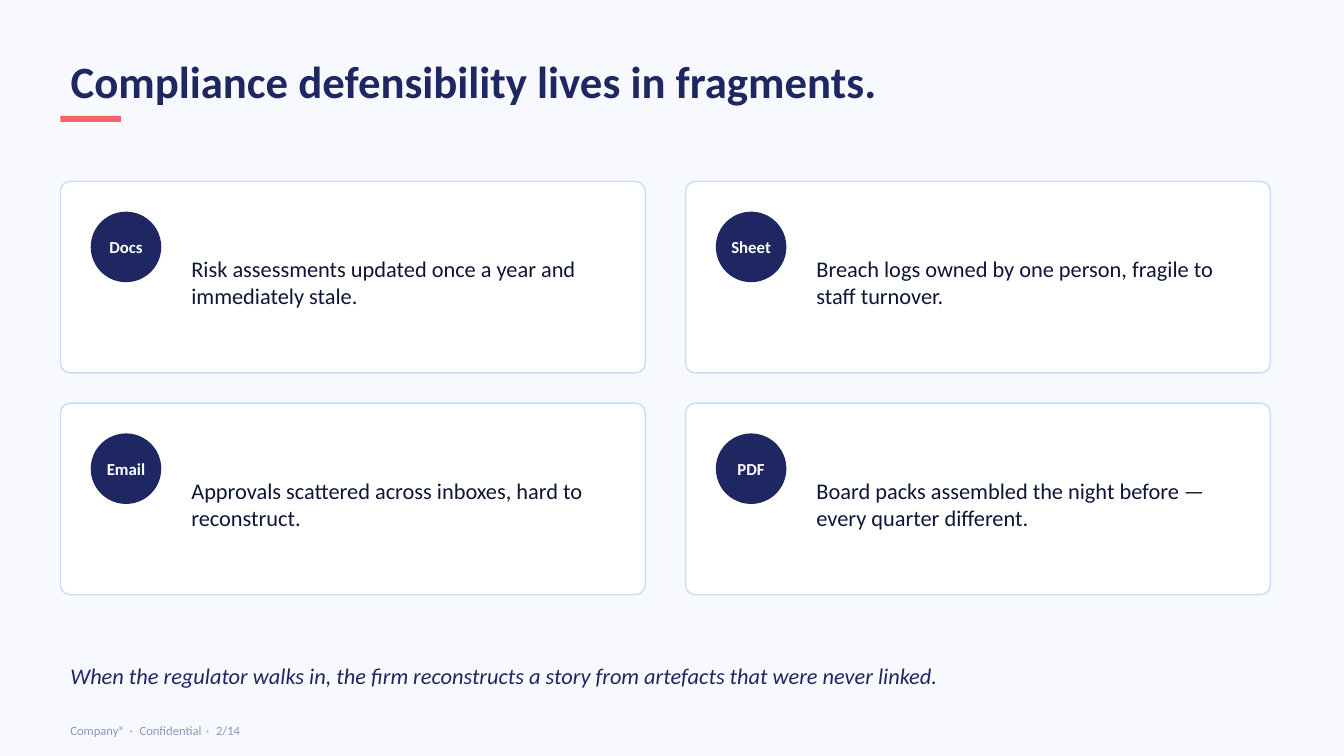
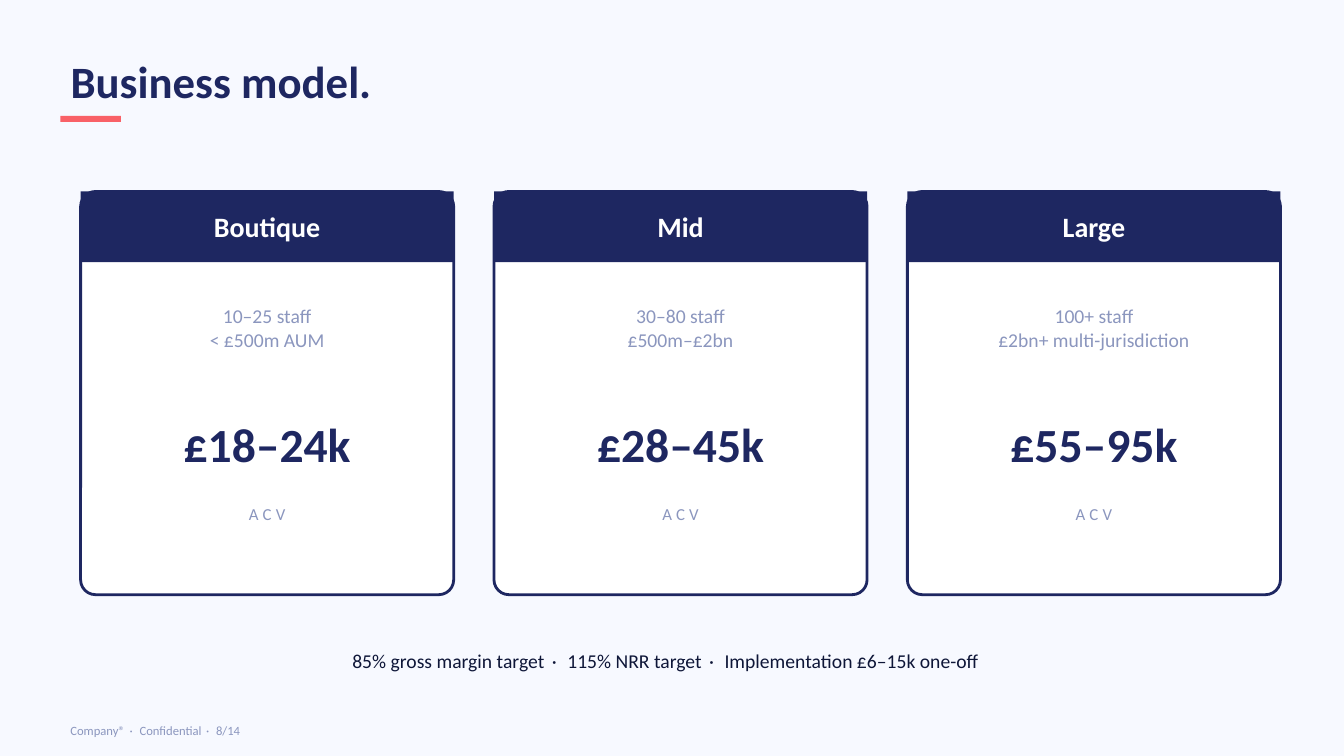
from dataclasses import dataclass

from pptx import Presentation
from pptx.dml.color import RGBColor
from pptx.enum.shapes import MSO_SHAPE
from pptx.enum.text import MSO_ANCHOR, MSO_AUTO_SIZE, PP_ALIGN
from pptx.shapes.autoshape import Shape
from pptx.slide import Slide
from pptx.text.text import TextFrame
from pptx.util import Inches, Pt

FONT = "Calibri"
COLOURS = {
    "background": "F7F9FF",
    "navy": "1E2761",
    "ink": "0E1638",
    "coral": "F96167",
    "ice": "CADCFC",
    "muted": "8B96BE",
    "white": "FFFFFF",
}
MARGIN = 0.6
CONTENT_WIDTH = 12
TOTAL_PAGES = 14
SEPARATOR = " · "
SEPARATOR_SPACING = 0.15


@dataclass(frozen=True)
class Area:
    left: float
    top: float
    width: float
    height: float

    def lengths(self) -> tuple:
        return tuple(Inches(n) for n in (self.left, self.top, self.width, self.height))


@dataclass(frozen=True)
class TextStyle:
    size: int
    colour: str
    bold: bool = False
    italic: bool = False
    align: PP_ALIGN = PP_ALIGN.LEFT
    spacing: float = 0


@dataclass(frozen=True)
class Fragment:
    source: str
    problem: str


@dataclass(frozen=True)
class Tier:
    name: str
    audience: tuple[str, str]
    price: str


TITLE = TextStyle(32, "navy", bold=True)
FOOTER = TextStyle(9, "muted")
BADGE = TextStyle(12, "white", bold=True, align=PP_ALIGN.CENTER)
PROBLEM = TextStyle(16, "ink")
CLOSING = TextStyle(16, "navy", italic=True)
TIER_NAME = TextStyle(20, "white", bold=True, align=PP_ALIGN.CENTER)
AUDIENCE = TextStyle(14, "muted", align=PP_ALIGN.CENTER)
PRICE = TextStyle(34, "navy", bold=True, align=PP_ALIGN.CENTER)
UNIT = TextStyle(12, "muted", align=PP_ALIGN.CENTER, spacing=3)
TARGETS = TextStyle(14, "ink", align=PP_ALIGN.CENTER)

FRAGMENTS = (
    Fragment("Docs", "Risk assessments updated once a year and immediately stale."),
    Fragment("Sheet", "Breach logs owned by one person, fragile to staff turnover."),
    Fragment("Email", "Approvals scattered across inboxes, hard to reconstruct."),
    Fragment("PDF", "Board packs assembled the night before — every quarter different."),
)
TIERS = (
    Tier("Boutique", ("10–25 staff", "< £500m AUM"), "£18–24k"),
    Tier("Mid", ("30–80 staff", "£500m–£2bn"), "£28–45k"),
    Tier("Large", ("100+ staff", "£2bn+ multi-jurisdiction"), "£55–95k"),
)


def colour(name: str) -> RGBColor:
    return RGBColor.from_string(COLOURS[name])


def write(frame: TextFrame, paragraphs: tuple[tuple[str, ...], ...], style: TextStyle) -> None:
    frame.auto_size = MSO_AUTO_SIZE.NONE
    frame.word_wrap = True
    frame.vertical_anchor = MSO_ANCHOR.MIDDLE
    for index, texts in enumerate(paragraphs):
        para = frame.add_paragraph() if index else frame.paragraphs[0]
        para.alignment = style.align
        for text in texts:
            span = para.add_run()
            span.text = text
            span.font.name = FONT
            span.font.size = Pt(style.size)
            span.font.bold = style.bold
            span.font.italic = style.italic
            span.font.color.rgb = colour(style.colour)
            spacing = style.size * SEPARATOR_SPACING if text == SEPARATOR else style.spacing
            if spacing:
                span._r.get_or_add_rPr().set("spc", str(round(spacing * 100)))


def separated(*items: str) -> tuple[str, ...]:
    texts = [items[0]]
    for item in items[1:]:
        texts += [SEPARATOR, item]
    return tuple(texts)


def add_text(page: Slide, area: Area, style: TextStyle, *paragraphs: tuple[str, ...]) -> None:
    box = page.shapes.add_textbox(*area.lengths())
    write(box.text_frame, paragraphs, style)


def add_block(page: Slide, kind: MSO_SHAPE, area: Area, fill: str) -> Shape:
    block = page.shapes.add_shape(kind, *area.lengths())
    block.shadow.inherit = False
    block.fill.solid()
    block.fill.fore_color.rgb = colour(fill)
    block.line.fill.background()
    return block


def add_label(page: Slide, kind: MSO_SHAPE, area: Area, text: str, style: TextStyle) -> None:
    frame = add_block(page, kind, area, "navy").text_frame
    frame.margin_left = frame.margin_right = 0
    write(frame, ((text,),), style)


def add_card(page: Slide, area: Area, line: str, weight: float, rounding: float) -> None:
    card = add_block(page, MSO_SHAPE.ROUNDED_RECTANGLE, area, "white")
    card.adjustments[0] = rounding
    card.line.color.rgb = colour(line)
    card.line.width = Pt(weight)


def add_page(deck: Presentation, title: str, number: int) -> Slide:
    page = deck.slides.add_slide(deck.slide_layouts.get_by_name("Title Only"))
    heading = page.shapes.title
    heading.left, heading.top, heading.width, heading.height = Area(
        MARGIN, 0.45, CONTENT_WIDTH, 0.7
    ).lengths()
    write(heading.text_frame, ((title,),), TITLE)
    add_block(page, MSO_SHAPE.RECTANGLE, Area(MARGIN, 1.15, 0.6, 0.06), "coral")
    footer = separated("Company®", "Confidential", f"{number}/{TOTAL_PAGES}")
    add_text(page, Area(MARGIN, 7.1, CONTENT_WIDTH, 0.3), FOOTER, footer)
    return page


def add_fragment(page: Slide, fragment: Fragment, left: float, top: float) -> None:
    add_card(page, Area(left, top, 5.8, 1.9), "ice", 1, 0.05)
    badge = Area(left + 0.3, top + 0.3, 0.7, 0.7)
    add_label(page, MSO_SHAPE.OVAL, badge, fragment.source, BADGE)
    add_text(page, Area(left + 1.2, top + 0.35, 4.4, 1.3), PROBLEM, (fragment.problem,))


def add_tier(page: Slide, tier: Tier, left: float) -> None:
    top, width, inset = 1.9, 3.7, 0.2
    add_card(page, Area(left, top, width, 4), "navy", 2, 0.04)
    add_label(page, MSO_SHAPE.RECTANGLE, Area(left, top, width, 0.7), tier.name, TIER_NAME)
    rows = (
        (2.8, 0.9, AUDIENCE, tier.audience),
        (3.9, 1, PRICE, (tier.price,)),
        (4.9, 0.4, UNIT, ("ACV",)),
    )
    for row_top, height, style, lines in rows:
        area = Area(left + inset, row_top, width - 2 * inset, height)
        add_text(page, area, style, *((line,) for line in lines))


def build_fragments(deck: Presentation) -> None:
    page = add_page(deck, "Compliance defensibility lives in fragments.", 2)
    for index, fragment in enumerate(FRAGMENTS):
        row, column = divmod(index, 2)
        add_fragment(page, fragment, MARGIN + column * 6.2, 1.8 + row * 2.2)
    closing = (
        "When the regulator walks in, the firm reconstructs a story "
        "from artefacts that were never linked."
    )
    add_text(page, Area(MARGIN, 6.4, CONTENT_WIDTH, 0.6), CLOSING, (closing,))


def build_business_model(deck: Presentation) -> None:
    page = add_page(deck, "Business model.", 8)
    for index, tier in enumerate(TIERS):
        add_tier(page, tier, 0.8 + index * 4.1)
    targets = separated(
        "85% gross margin target", "115% NRR target", "Implementation £6–15k one-off"
    )
    add_text(page, Area(MARGIN, 6.3, CONTENT_WIDTH, 0.5), TARGETS, targets)


def main() -> None:
    deck = Presentation()
    deck.slide_width, deck.slide_height = Inches(13.33), Inches(7.5)
    background = deck.slide_master.background.fill
    background.solid()
    background.fore_color.rgb = colour("background")
    build_fragments(deck)
    build_business_model(deck)
    deck.save("out.pptx")


if __name__ == "__main__":
    main()
